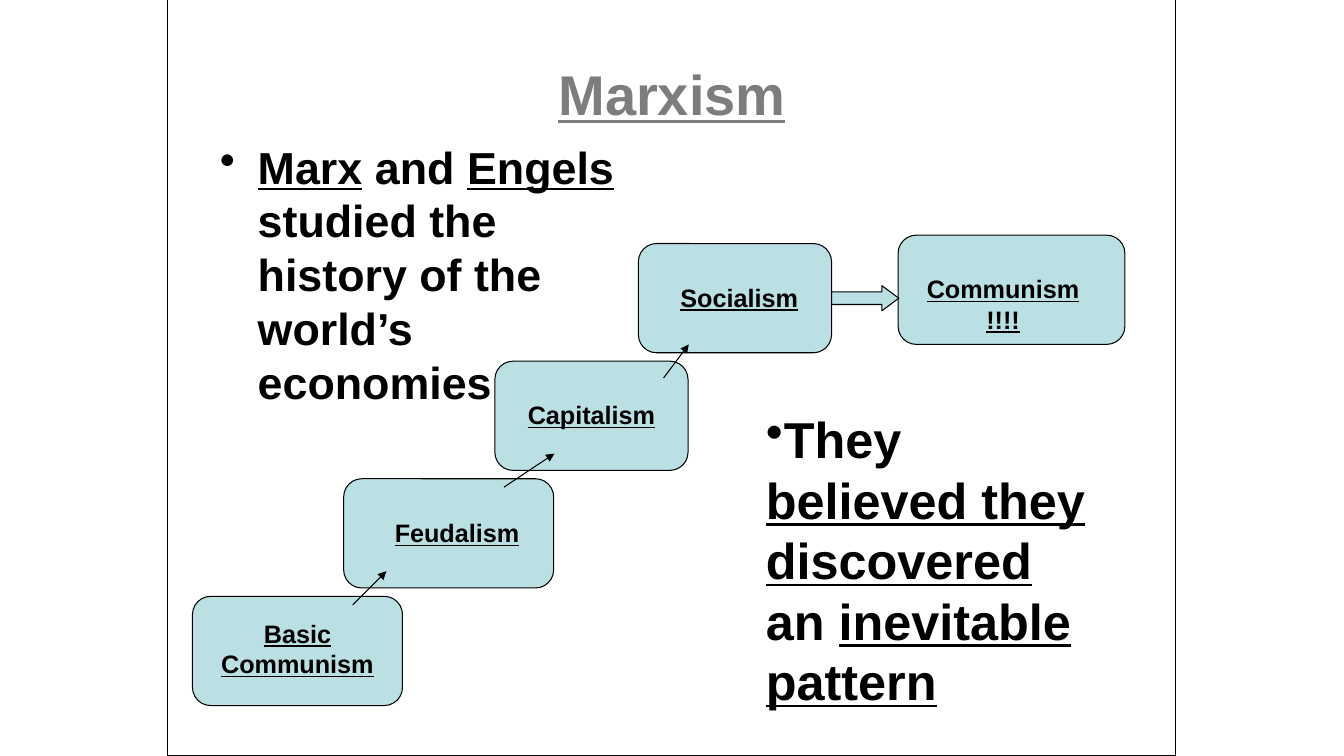
import pptx
import pptx.util
import pptx.dml.color
import pptx.enum.shapes
import pptx.enum.text
import pptx.oxml
import pptx.oxml.ns
from lxml import etree

Pt = pptx.util.Pt
SHAPES = pptx.enum.shapes.MSO_SHAPE
CENTER = pptx.enum.text.PP_ALIGN.CENTER
ANCHOR = pptx.enum.text.MSO_ANCHOR
COLORS = {"ink": "000000", "paper": "FFFFFF", "stage": "BBE0E3"}
FONT = "Arial"
STAGE_HEIGHT = 78

# name, left, top, width, label (dx, dy, width, height), arrow (dx, dy, run, rise)
STAGES = [
    ("Basic Communism", 137.5, 426, 150, (0, 12, 150, 50.4), (114.5, 6, 24, -24)),
    ("Feudalism", 245.5, 342, 150, (18, 24, 126, 28.8), (114.5, 6, 36, -24)),
    ("Capitalism", 353.5, 258, 138, (6, 24, 126, 28.8), (120.5, 12, 18, -24)),
    ("Socialism", 456, 174, 138, (18, 24, 108, 28.8), None),
    ("Communism!!!!", 641.5, 168, 162, (12, 24, 126, 50.4), None),
]


def color(name):
    return pptx.dml.color.RGBColor.from_string(COLORS[name])


def points(box):
    return [Pt(value) for value in box]


def subelement(parent, tag, **attributes):
    return etree.SubElement(parent, pptx.oxml.ns.qn(tag), attributes)


def add_outlined_shape(slide, kind, box, fill):
    shape = slide.shapes.add_shape(kind, *points(box))
    shape.shadow.inherit = False
    shape.fill.solid()
    shape.fill.fore_color.rgb = color(fill)
    shape.line.color.rgb = color("ink")
    shape.line.width = Pt(0.75)
    return shape


def style_paragraph(paragraph, size, underline=None):
    font = paragraph.font
    font.name, font.size, font.bold = FONT, Pt(size), True
    font.underline = underline
    font.color.rgb = color("ink")


def add_text_box(slide, box):
    text_frame = slide.shapes.add_textbox(*points(box)).text_frame
    text_frame.word_wrap = True
    return text_frame.paragraphs[0]


def add_frame(slide, box):
    """Outlined panel with a half-transparent white fill."""
    frame = add_outlined_shape(slide, SHAPES.RECTANGLE, box, "paper")
    fill_color = frame.fill._xPr.find(".//" + pptx.oxml.ns.qn("a:srgbClr"))
    subelement(fill_color, "a:alpha", val="49000")


def add_title(slide, box):
    title = slide.shapes.title
    title.left, title.top, title.width, title.height = points(box)
    title.text_frame.text = "Marxism"
    title.text_frame.vertical_anchor = ANCHOR.MIDDLE
    paragraph = title.text_frame.paragraphs[0]
    paragraph.alignment = CENTER
    style_paragraph(paragraph, 40, underline=True)


def add_bullet(slide, box, runs, size, space_before, indent=0):
    """Bulleted paragraph from (text, underlined) runs."""
    paragraph = add_text_box(slide, box)
    style_paragraph(paragraph, size)
    paragraph.space_before = Pt(space_before)
    for text, underlined in runs:
        run = paragraph.add_run()
        run.text = text
        run.font.underline = underlined
    properties = paragraph._p.get_or_add_pPr()
    properties.set("marL", str(Pt(indent)))
    properties.set("indent", str(-Pt(indent)))
    bullet = pptx.oxml.parse_xml(
        f'<a:buChar {pptx.oxml.ns.nsdecls("a")} char="•"/>')
    properties.find(pptx.oxml.ns.qn("a:defRPr")).addprevious(bullet)


def add_stage(slide, name, left, top, width, label):
    add_outlined_shape(slide, SHAPES.ROUNDED_RECTANGLE,
                       (left, top, width, STAGE_HEIGHT), "stage")
    dx, dy, label_width, label_height = label
    paragraph = add_text_box(slide, (left + dx, top + dy, label_width, label_height))
    paragraph.text = name
    paragraph.alignment = CENTER
    paragraph.space_before = Pt(9)
    style_paragraph(paragraph, 18, underline=True)


def add_step_arrow(slide, x, y, run, rise):
    arrow = slide.shapes.add_connector(
        pptx.enum.shapes.MSO_CONNECTOR.STRAIGHT, *points((x, y, x + run, y + rise)))
    arrow.line.color.rgb = color("ink")
    arrow.line.width = Pt(0.75)
    subelement(arrow.line._get_or_add_ln(), "a:tailEnd", type="triangle")
    subelement(arrow._element.spPr, "a:effectLst")


def add_stages(slide):
    for name, left, top, width, label, _ in STAGES:
        add_stage(slide, name, left, top, width, label)
    for _, left, top, _, _, arrow in STAGES:
        if arrow:
            dx, dy, run, rise = arrow
            add_step_arrow(slide, left + dx, top + dy, run, rise)
    final_arrow = add_outlined_shape(slide, SHAPES.RIGHT_ARROW,
                                     (594, 204, 48, 18), "stage")
    final_arrow.adjustments[1] = 0.67


def main():
    presentation = pptx.Presentation()
    presentation.slide_width, presentation.slide_height = Pt(960), Pt(540)
    slide = presentation.slides.add_slide(presentation.slide_layouts[5])
    add_frame(slide, (119.5, 0, 720, 540))
    add_title(slide, (48, 21.6, 864, 90))
    add_bullet(slide, (150, 96, 318, 356),
               [("Marx", True), (" and ", False), ("Engels", True),
                (" studied the history of the world’s economies", False)],
               size=32, space_before=6.4, indent=27)
    add_stages(slide)
    add_bullet(slide, (540, 288, 246, 223),
               [("They ", False), ("believed they discovered", True),
                (" an ", False), ("inevitable pattern", True)],
               size=36, space_before=18)
    presentation.save("out.pptx")


if __name__ == "__main__":
    main()
